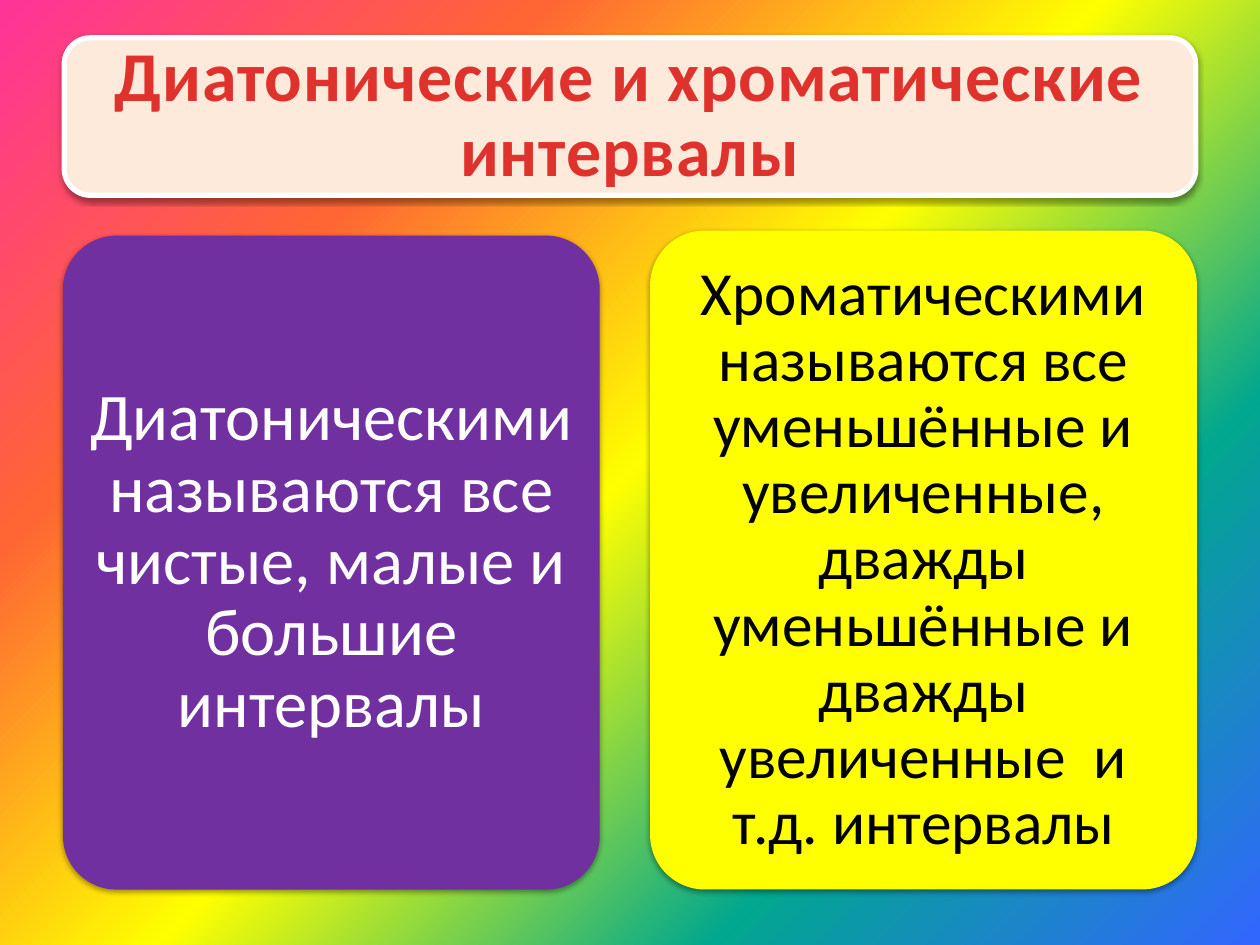
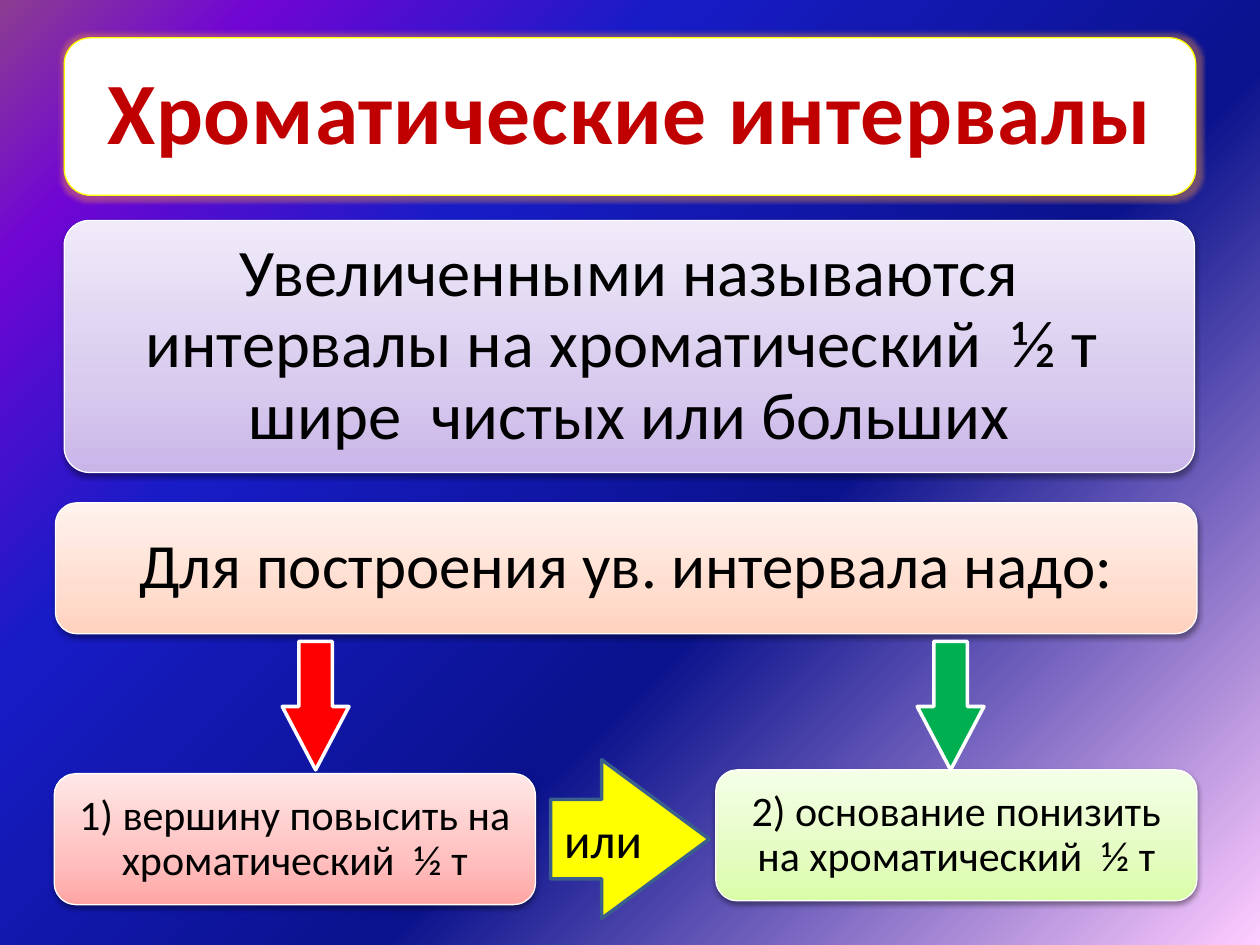
from dataclasses import dataclass
from typing import NamedTuple, Optional, Union

from lxml import etree
from pptx import Presentation
from pptx import util as u
from pptx.dml import color as dml
from pptx.enum import shapes, text
from pptx.oxml import ns

ROUNDED = shapes.MSO_SHAPE.ROUNDED_RECTANGLE
DOWN = shapes.MSO_SHAPE.DOWN_ARROW
RIGHT = shapes.MSO_SHAPE.RIGHT_ARROW


class Gradient(NamedTuple):
    angle: int  # clockwise degrees
    stops: tuple[tuple[int, str], ...]


def panel_tint(deep: str, middle: str, light: str) -> Gradient:
    return Gradient(270, ((0, deep), (35, middle), (100, light)))


class Effect(NamedTuple):
    kind: str
    color: str
    alpha: int
    radius: float
    distance: float = 0


@dataclass(frozen=True)
class Theme:
    font: str = "Calibri"
    black: str = "000000"
    white: str = "FFFFFF"
    yellow: str = "FFFF00"
    red: str = "FF0000"
    green: str = "00B050"
    purple: str = "7030A0"
    peach: str = "FDEADA"
    title_red: str = "E0322D"
    title_dark_red: str = "C00000"
    arrow_edge: str = "3A5F8C"
    lilac_tint: Gradient = panel_tint("C9B5E8", "D8CBEE", "F0EAF9")
    orange_tint: Gradient = panel_tint("FFD2BD", "FFDED0", "FFF2ED")
    rose_tint: Gradient = panel_tint("FFA6A5", "FFC0BF", "FFE7E7")
    lime_tint: Gradient = panel_tint("DAFDA7", "E4FCC2", "F5FFE7")
    rainbow: Gradient = Gradient(45, (
        (0, "FF3399"), (25, "FF6633"), (50, "FFFF00"), (75, "01A78F"), (100, "3366FF")))
    night: Gradient = Gradient(225, (
        (0, "FFCCFF"), (40, "0A128C"), (70, "181CC7"), (88, "7005D4"), (100, "8C3D91")))
    shadow: Effect = Effect("outerShdw", "000000", 38, 3.1, 1.6)
    glow: Effect = Effect("glow", "F79646", 40, 5)
    title_size: int = 40
    big_title_size: int = 50
    definition_size: int = 38
    long_definition_size: int = 35
    task_size: int = 36
    step_size: int = 24
    arrow_size: int = 28


THEME = Theme()


@dataclass(frozen=True)
class Block:
    left: float
    top: float
    width: float
    height: float
    fill: Union[str, Gradient]
    words: str = ""
    size: int = 0
    ink: str = THEME.black
    line: Optional[str] = THEME.white
    line_width: float = 0.75
    effect: Optional[Effect] = THEME.shadow
    kind: shapes.MSO_SHAPE = ROUNDED
    adjust: tuple[float, ...] = ()
    inset: tuple[float, float] = (0.1, 0.05)
    spacing: float = 0.9
    is_title: bool = False


def rgb(value: str) -> dml.RGBColor:
    return dml.RGBColor.from_string(value)


def paint(fill, owner, paint_with: Union[str, Gradient]) -> None:
    """Apply a solid colour or a gradient with any number of stops."""
    if isinstance(paint_with, str):
        fill.solid()
        fill.fore_color.rgb = rgb(paint_with)
        return
    fill.gradient()
    fill.gradient_angle = 360 - paint_with.angle
    stop_list = owner.find(".//" + ns.qn("a:gsLst"))
    for old_stop in list(stop_list):
        stop_list.remove(old_stop)
    for position, value in paint_with.stops:
        stop = etree.SubElement(stop_list, ns.qn("a:gs"), pos=str(position * 1000))
        etree.SubElement(stop, ns.qn("a:srgbClr"), val=value)


def add_effect(shape, effect: Effect) -> None:
    effects = shape.element.spPr.find(ns.qn("a:effectLst"))
    node = etree.SubElement(effects, ns.qn("a:" + effect.kind))
    if effect.kind == "glow":
        node.set("rad", str(u.Pt(effect.radius)))
    else:
        node.set("blurRad", str(u.Pt(effect.radius)))
        node.set("dist", str(u.Pt(effect.distance)))
        node.set("dir", str(90 * 60000))
        node.set("rotWithShape", "0")
    tone = etree.SubElement(node, ns.qn("a:srgbClr"), val=effect.color)
    etree.SubElement(tone, ns.qn("a:alpha"), val=str(effect.alpha * 1000))


def write_words(shape, block: Block) -> None:
    frame = shape.text_frame
    frame.word_wrap = True
    frame.vertical_anchor = text.MSO_ANCHOR.MIDDLE
    frame.margin_left = frame.margin_right = u.Inches(block.inset[0])
    frame.margin_top = frame.margin_bottom = u.Inches(block.inset[1])
    paragraph = frame.paragraphs[0]
    paragraph.alignment = text.PP_ALIGN.CENTER
    paragraph.line_spacing = block.spacing
    paragraph.font.name = THEME.font
    paragraph.font.size = u.Pt(block.size)
    paragraph.font.bold = block.is_title
    paragraph.font.color.rgb = rgb(block.ink)
    run = paragraph.add_run()
    run.text = block.words
    if block.is_title:  # slightly widened letters
        run.font._element.set("spc", "50")


def draw(slide, block: Block) -> None:
    box = (u.Inches(v) for v in (block.left, block.top, block.width, block.height))
    shape = slide.shapes.add_shape(block.kind, *box)
    for index, value in enumerate(block.adjust):
        shape.adjustments[index] = value
    shape.shadow.inherit = False
    paint(shape.fill, shape.element, block.fill)
    if block.line:
        shape.line.color.rgb = rgb(block.line)
        shape.line.width = u.Pt(block.line_width)
    else:
        shape.line.fill.background()
    if block.effect:
        add_effect(shape, block.effect)
    if block.words:
        write_words(shape, block)


def title(words: str, size: int, ink: str, fill: str, **style) -> Block:
    return Block(0.51, 0.3, 8.98, 1.25, fill, words, size, ink, is_title=True, **style)


def definition(left: float, top: float, width: float, height: float,
               fill: Union[str, Gradient], words: str, size: int, **style) -> Block:
    return Block(left, top, width, height, fill, words, size,
                 adjust=(0.1,), inset=(0.08, 0.05), **style)


def step(left: float, top: float, fill: Gradient, words: str) -> Block:
    return Block(left, top, 3.82, 1.04, fill, words, THEME.step_size)


def down_arrow(left: float, fill: str) -> Block:
    return Block(left, 5.09, 0.53, 1.02, fill, line_width=2, effect=None,
                 kind=DOWN, adjust=(0.5, 0.949))


# Diatonic and chromatic intervals side by side
KINDS_OF_INTERVALS = (
    title("Диатонические и хроматические интервалы", THEME.title_size,
          THEME.title_red, THEME.peach, line_width=3, inset=(0.17, 0.08)),
    definition(0.5, 1.87, 4.26, 5.19, THEME.purple,
               "Диатоническими называются все чистые, малые и большие интервалы",
               THEME.definition_size, ink=THEME.white, line=None),
    definition(5.16, 1.83, 4.34, 5.23, THEME.yellow,
               "Хроматическими называются все уменьшённые и увеличенные, дважды "
               "уменьшённые и дважды увеличенные  и т.д. интервалы",
               THEME.long_definition_size, line=None),
)

# Building an augmented interval
AUGMENTED_INTERVALS = (
    title("Хроматические интервалы", THEME.big_title_size, THEME.title_dark_red,
          THEME.white, line=THEME.yellow, effect=THEME.glow, inset=(0.21, 0.1)),
    definition(0.51, 1.75, 8.97, 2, THEME.lilac_tint,
               "Увеличенными называются интервалы на хроматический  ½ т  "
               "шире  чистых или больших", THEME.definition_size),
    Block(0.44, 3.99, 9.06, 1.04, THEME.orange_tint,
          "Для построения ув. интервала надо:", THEME.task_size, inset=(0.15, 0.07)),
    step(0.43, 6.14, THEME.rose_tint, "1) вершину повысить на хроматический  ½ т"),
    step(5.68, 6.11, THEME.lime_tint, "2) основание понизить на хроматический  ½ т"),
    down_arrow(2.24, THEME.red),
    down_arrow(7.28, THEME.green),
    Block(4.37, 6.03, 1.26, 1.26, THEME.yellow, "или", THEME.arrow_size,
          line=THEME.arrow_edge, line_width=2, effect=None, kind=RIGHT,
          adjust=(0.5, 0.678), spacing=1.0),
)


def add_slide(deck, background: Gradient, blocks: tuple[Block, ...]) -> None:
    slide = deck.slides.add_slide(deck.slide_layouts[6])
    paint(slide.background.fill, slide.element, background)
    for block in blocks:
        draw(slide, block)


def main() -> None:
    deck = Presentation()
    deck.slide_width, deck.slide_height = u.Inches(10), u.Inches(7.5)
    add_slide(deck, THEME.rainbow, KINDS_OF_INTERVALS)
    add_slide(deck, THEME.night, AUGMENTED_INTERVALS)
    deck.save("out.pptx")


if __name__ == "__main__":
    main()
